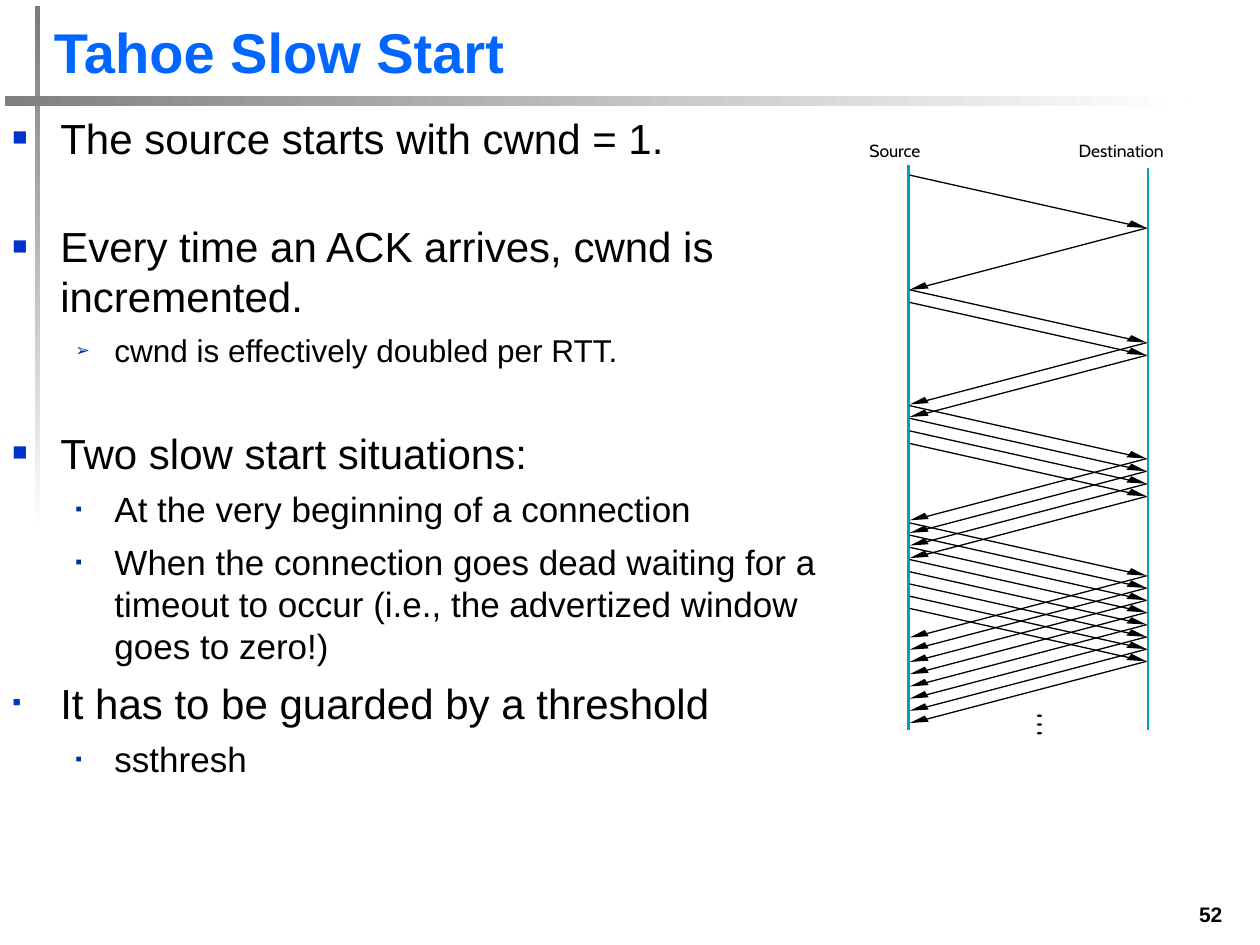
"""Build a slide on slow start with a bullet list and a timing diagram."""
from dataclasses import dataclass

from lxml import etree
from pptx import Presentation
from pptx.dml.color import RGBColor
from pptx.enum.shapes import MSO_CONNECTOR, MSO_SHAPE
from pptx.enum.text import MSO_ANCHOR, PP_ALIGN
from pptx.oxml.ns import qn
from pptx.util import Inches, Pt

LINE = MSO_CONNECTOR.STRAIGHT
RECT = MSO_SHAPE.RECTANGLE
OVAL = MSO_SHAPE.OVAL
LOW = MSO_ANCHOR.BOTTOM
TOP = MSO_ANCHOR.TOP
LEFT = PP_ALIGN.LEFT
RIGHT = PP_ALIGN.RIGHT
BLACK = "000000"
TEAL = "00A0C6"


@dataclass
class Label:
    text: str
    box: tuple[float, float, float, float]
    size: float
    color: str = BLACK
    font: str = "Arial"
    bold: bool = False
    align: int = LEFT
    anchor: int = TOP
    inset: bool = True
    wrap: bool = True


@dataclass
class Item:
    text: str
    size: float
    mark: str
    level: int = 0
    gap: float = 6


@dataclass
class Bar:
    box: tuple[float, float, float, float]
    tint: str
    angle: float


@dataclass
class Round:
    top: float
    count: int
    step: float = 0.1


LABELS = [
    Label("52", (9.17, 7.11, 0.63, 0.3), 12, bold=True, align=RIGHT),
    Label("Tahoe Slow Start", (0.33, 0.08, 8.5, 0.64), 32, "0066FF", bold=True, anchor=LOW),
    Label("Source", (6.9, 1.11, 0.44, 0.17), 10, font="Cabin", inset=False, wrap=False),
    Label("Destination", (8.56, 1.11, 0.69, 0.17), 10, font="Cabin", inset=False, wrap=False),
]
BARS = [
    Bar((0.28, 0.05, 0.04, 4.17), "767D79", 270),
    Bar((0.04, 0.76, 9.37, 0.08), "808080", 0),
]
ITEMS = [
    Item("The source starts with cwnd = 1.", 24, "■"),
    Item("Every time an ACK arrives, cwnd is incremented.", 24, "■", gap=33),
    Item("cwnd is effectively doubled per RTT.", 18, "➢", 1),
    Item("Two slow start situations:", 24, "■", gap=33),
    Item("At the very beginning of a connection", 20, "▪", 1),
    Item(
        "When the connection goes dead waiting for a timeout to occur "
        "(i.e., the advertized window goes to zero!)", 20, "▪", 1),
    Item("It has to be guarded by a threshold", 24, "▪"),
    Item("ssthresh", 20, "▪", 1),
]
LEVELS = [(0.38, 0.38, "0033CC", 60), (0.81, 0.31, "003399", 55)]
ROUNDS = [Round(1.39, 1), Round(2.3, 2), Round(3.22, 4), Round(4.15, 8, 0.097)]
RAILS = [(7.21, 1.31), (9.11, 1.33)]
SEND = (7.22, 0, 8.96, 0.39)
SENDTIP = [(8.94, 0.41), (9.1, 0.42), (8.98, 0.36)]
ACK = (9.1, 0.42, 7.35, 0.88)
ACKTIP = [(7.34, 0.85), (7.22, 0.91), (7.37, 0.9)]


def paint(code: str) -> RGBColor:
    """Turn a hex string into a colour."""
    return RGBColor.from_string(code)


def assign(obj: object, values: dict) -> None:
    """Set each named value on the object."""
    for name, value in values.items():
        setattr(obj, name, value)


def add_box(slide, box: tuple):
    """Add an empty text box and return its frame."""
    return slide.shapes.add_textbox(*map(Inches, box)).text_frame


def write(par, text: str, size: float, color: str, font: str, bold: bool = False) -> None:
    """Add a styled run to a paragraph."""
    run = par.add_run()
    run.text = text
    assign(run.font, {"size": Pt(size), "name": font, "bold": bold})
    run.font.color.rgb = paint(color)


def draw_label(slide, label: Label) -> None:
    """Draw a one-line label."""
    frame = add_box(slide, label.box)
    assign(frame, {"word_wrap": label.wrap, "vertical_anchor": label.anchor})
    if not label.inset:
        assign(frame, dict.fromkeys(
            ("margin_left", "margin_top", "margin_right", "margin_bottom"), 0))
    par = frame.paragraphs[0]
    par.alignment = label.align
    write(par, label.text, label.size, label.color, label.font, label.bold)


def add_mark(par, item: Item) -> None:
    """Give a paragraph its indent and bullet."""
    left, hang, color, scale = LEVELS[item.level]
    props = par._p.get_or_add_pPr()
    props.set("marL", str(Inches(left)))
    props.set("indent", str(-Inches(hang)))
    tint = etree.SubElement(props, qn("a:buClr"))
    etree.SubElement(tint, qn("a:srgbClr"), val=color)
    etree.SubElement(props, qn("a:buSzPct"), val=str(scale * 1000))
    etree.SubElement(props, qn("a:buFont"), typeface="Arial")
    etree.SubElement(props, qn("a:buChar"), char=item.mark)


def draw_list(slide, items: list[Item]) -> None:
    """Draw the bullet list in one text box."""
    frame = add_box(slide, (0, 0.84, 6.89, 5.83))
    frame.word_wrap = True
    for rank, item in enumerate(items):
        par = frame.add_paragraph() if rank else frame.paragraphs[0]
        assign(par, {"level": item.level, "space_before": Pt(item.gap)})
        add_mark(par, item)
        write(par, item.text, item.size, BLACK, "Arial")


def draw_bar(slide, bar: Bar) -> None:
    """Draw a bar that fades to white."""
    shape = slide.shapes.add_shape(RECT, *map(Inches, bar.box))
    shape.shadow.inherit = False
    shape.line.fill.background()
    shape.fill.gradient()
    shape.fill.gradient_angle = bar.angle
    for stop, code in zip(shape.fill.gradient_stops, (bar.tint, "FFFFFF")):
        stop.color.rgb = paint(code)


def draw_line(slide, ends: tuple, color: str, width: float) -> None:
    """Draw a straight line without a shadow."""
    line = slide.shapes.add_connector(LINE, *map(Inches, ends))
    line.line.color.rgb = paint(color)
    line.line.width = Pt(width)
    etree.SubElement(line._element.spPr, qn("a:effectLst"))


def fill_dark(shape) -> None:
    """Fill a shape with black and drop its outline."""
    shape.shadow.inherit = False
    shape.fill.solid()
    shape.fill.fore_color.rgb = paint(BLACK)
    shape.line.fill.background()


def draw_arrow(slide, top: float, ends: tuple, tip: list) -> None:
    """Draw a message line and its slanted head."""
    x1, y1, x2, y2 = ends
    draw_line(slide, (x1, top + y1, x2, top + y2), BLACK, 0.75)
    spots = [(Inches(x), Inches(top + y)) for x, y in tip]
    path = slide.shapes.build_freeform(*spots[0])
    path.add_line_segments(spots[1:], close=True)
    fill_dark(path.convert_to_shape())


def draw_flow(slide) -> None:
    """Draw both rails, all messages and the trailing dots."""
    for x, top in RAILS:
        draw_line(slide, (x, top, x, 5.79), TEAL, 1.5)
    for turn in ROUNDS:
        for rank in range(turn.count):
            top = turn.top + rank * turn.step
            draw_arrow(slide, top, SEND, SENDTIP)
            draw_arrow(slide, top, ACK, ACKTIP)
    for rank in range(3):
        box = (8.23, 5.67 + rank * 0.07, 0.04, 0.02)
        fill_dark(slide.shapes.add_shape(OVAL, *map(Inches, box)))


def main() -> None:
    """Build and save the slide."""
    deck = Presentation()
    assign(deck, {"slide_width": Inches(10), "slide_height": Inches(7.5)})
    slide = deck.slides.add_slide(deck.slide_layouts[6])
    for bar in BARS:
        draw_bar(slide, bar)
    for label in LABELS:
        draw_label(slide, label)
    draw_list(slide, ITEMS)
    draw_flow(slide)
    deck.save("out.pptx")


if __name__ == "__main__":
    main()
